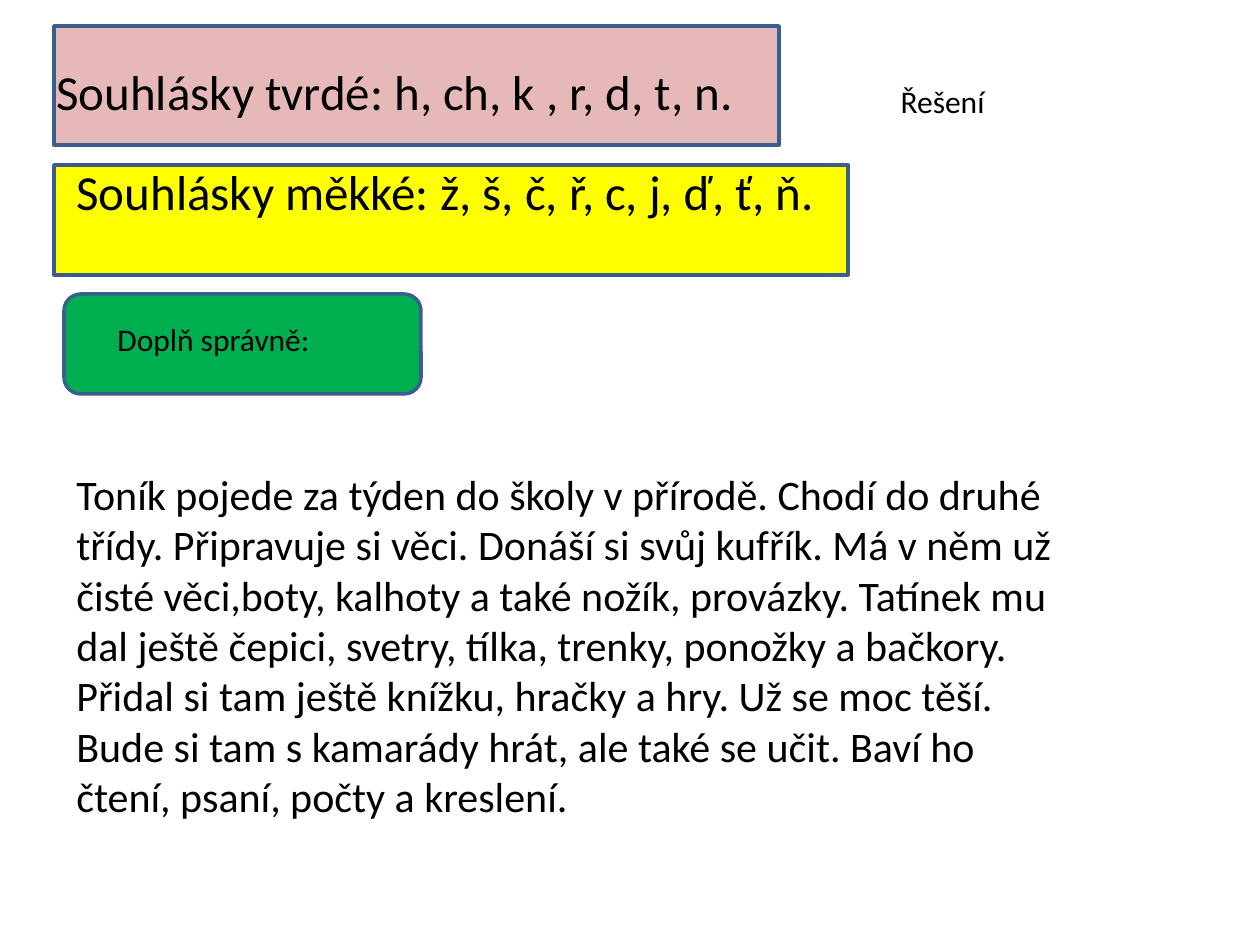
from dataclasses import dataclass

from pptx import Presentation
from pptx.dml.color import RGBColor
from pptx.enum.shapes import MSO_SHAPE
from pptx.enum.text import MSO_ANCHOR, MSO_AUTO_SIZE, PP_ALIGN
from pptx.util import Emu, Pt


@dataclass(frozen=True)
class Theme:
    font: str = "Calibri"
    ink: str = "000000"
    outline: str = "3A5F8C"
    hard: str = "E6B9B8"
    soft: str = "FFFF00"
    task: str = "00B050"
    outline_width: int = 2
    rule_size: int = 28
    story_size: int = 24
    label_size: int = 18


THEME = Theme()
SCALE = 914400 / 126


def px(*lengths):
    return [Emu(round(n * SCALE)) for n in lengths]


def set_attrs(obj, values):
    for name, value in values.items():
        setattr(obj, name, value)


def write(sp, text, size):
    tf = sp.text_frame
    set_attrs(tf, {"word_wrap": True, "auto_size": MSO_AUTO_SIZE.NONE,
                   "vertical_anchor": MSO_ANCHOR.TOP})
    p = tf.paragraphs[0]
    p.alignment = PP_ALIGN.LEFT
    r = p.add_run()
    r.text = text
    set_attrs(r.font, {"name": THEME.font, "size": Pt(size)})
    r.font.color.rgb = RGBColor.from_string(THEME.ink)


def add_title(s, box, text):
    sp = s.shapes.title
    set_attrs(sp, dict(zip(("left", "top", "width", "height"), px(*box))))
    write(sp, text, THEME.label_size)


def add_text(s, box, text, size):
    write(s.shapes.add_textbox(*px(*box)), text, size)


def add_panel(s, box, fill, inner, text, size, shape=MSO_SHAPE.RECTANGLE):
    sp = s.shapes.add_shape(shape, *px(*box))
    sp.shadow.inherit = False
    sp.fill.solid()
    sp.fill.fore_color.rgb = RGBColor.from_string(fill)
    sp.line.color.rgb = RGBColor.from_string(THEME.outline)
    sp.line.width = Pt(THEME.outline_width)
    left, top = box[:2]
    dx, dy, width, height = inner
    add_text(s, (left + dx, top + dy, width, height), text, size)


def main():
    prs = Presentation()
    prs.slide_width, prs.slide_height = px(1260, 945)
    s = prs.slides.add_slide(prs.slide_layouts[5])
    add_title(s, (888, 76, 248, 89), "Řešení")
    add_panel(s, (54, 26, 725, 119), THEME.hard, (-10, 29, 1032, 72),
              "Souhlásky tvrdé: h, ch, k , r, d, t, n.", THEME.rule_size)
    add_panel(s, (54, 165, 794, 110), THEME.soft, (10, -10, 774, 72),
              "Souhlásky měkké: ž, š, č, ř, c, j, ď, ť, ň.", THEME.rule_size)
    add_panel(s, (64, 294, 357, 100), THEME.task, (41, 20, 268, 50),
              "Doplň správně:", THEME.label_size, MSO_SHAPE.ROUNDED_RECTANGLE)
    add_text(s, (64, 462, 1022, 369),
             "Toník pojede za týden do školy v přírodě. Chodí do druhé třídy. "
             "Připravuje si věci. Donáší si svůj kufřík. Má v něm už čisté "
             "věci,boty, kalhoty a také nožík, provázky. Tatínek mu dal ještě "
             "čepici, svetry, tílka, trenky, ponožky a bačkory. Přidal si tam "
             "ještě knížku, hračky a hry. Už se moc těší. Bude si tam s "
             "kamarády hrát, ale také se učit. Baví ho čtení, psaní, počty a "
             "kreslení.", THEME.story_size)
    prs.save("out.pptx")


if __name__ == "__main__":
    main()
